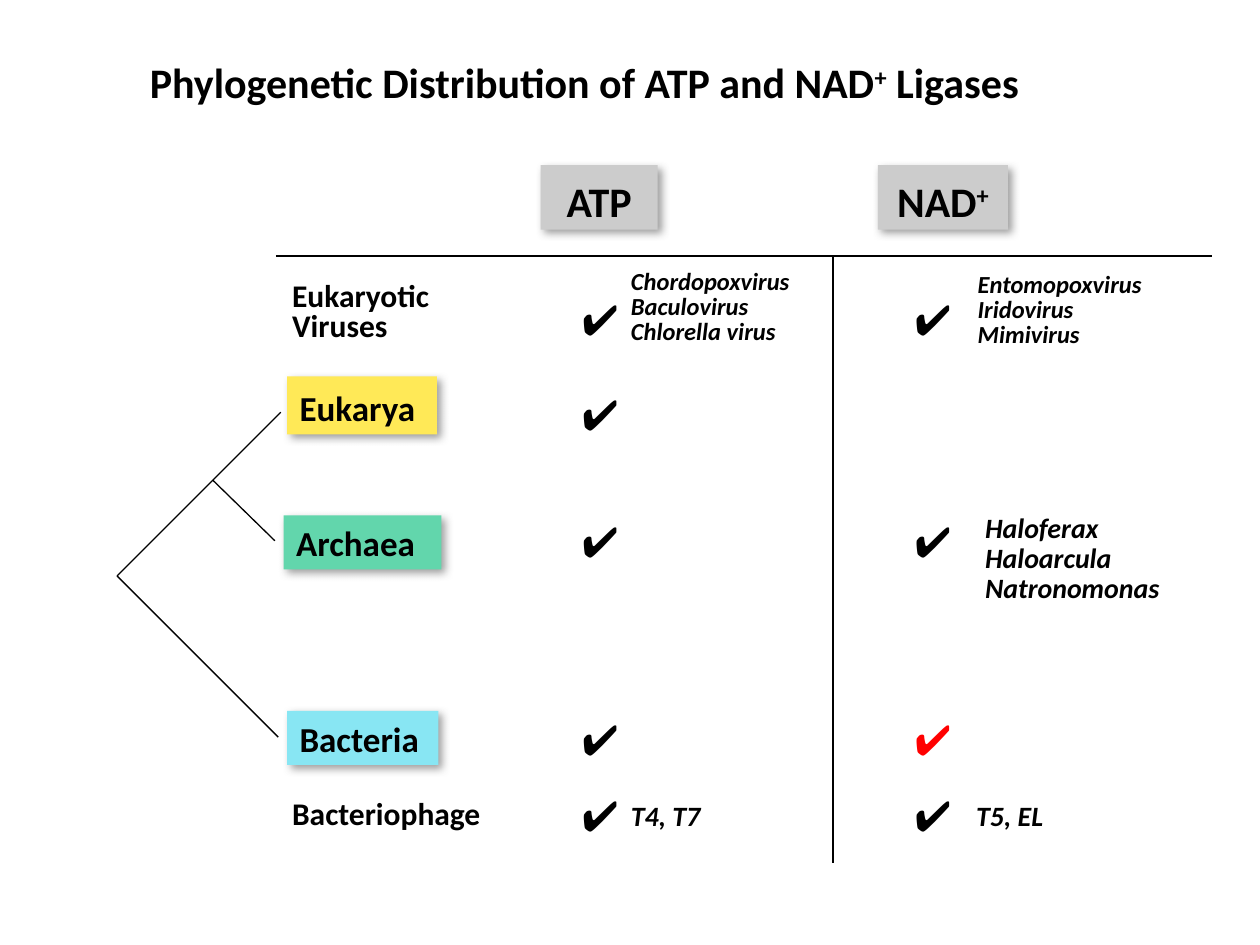
"""Build a slide on the phylogenetic distribution of ATP and NAD+ ligases."""
import dataclasses
import itertools

import lxml.etree
import pptx
import pptx.dml.color
import pptx.enum.shapes
import pptx.enum.text
import pptx.oxml
import pptx.oxml.ns
import pptx.shapes.base
import pptx.slide
import pptx.text.text
import pptx.util

Cm = pptx.util.Cm
Align = pptx.enum.text.PP_ALIGN


@dataclasses.dataclass(frozen=True)
class Theme:
    font: str = "Calibri"
    mark_font: str = "Comic Neue"
    ink: str = "000000"
    alert: str = "FF0000"
    shadow: str = "808080"
    grey: str = "CCCCCC"
    yellow: str = "FFE957"
    green: str = "62D6AC"
    blue: str = "88E6F3"
    heading: float = 24
    domain: float = 20
    group: float = 18
    example: float = 16
    small: float = 14
    line: float = 0.75


THEME = Theme()


@dataclasses.dataclass(frozen=True)
class Style:
    size: float
    font: str = THEME.font
    color: str = THEME.ink
    bold: bool = True
    italic: bool = False
    spacing: float = 1.0
    alignment: Align = Align.LEFT


@dataclasses.dataclass(frozen=True)
class Box:
    left: float
    top: float
    width: float
    height: float

    def lengths(self) -> tuple:
        return Cm(self.left), Cm(self.top), Cm(self.width), Cm(self.height)


@dataclasses.dataclass(frozen=True)
class Tag:
    text: str
    box: Box
    fill: str
    style: Style
    inset: float


@dataclasses.dataclass(frozen=True)
class Label:
    text: str
    box: Box
    style: Style


@dataclasses.dataclass(frozen=True)
class Line:
    start: tuple[float, float]
    end: tuple[float, float]


HEADING = Style(THEME.heading)
COLUMN = Style(THEME.heading, alignment=Align.CENTER)
DOMAIN = Style(THEME.domain)
GROUP = Style(THEME.group, spacing=0.8)
VIRUS = Style(THEME.small, italic=True, spacing=0.85)
PHAGE = Style(THEME.example, italic=True, spacing=0.85)
ARCHAEON = Style(THEME.example, italic=True, spacing=0.9)

TAGS = [
    Tag("ATP", Box(10.9, 3.33, 2.36, 1.3), THEME.grey, COLUMN, 0.2),
    Tag("NAD+", Box(17.7, 3.33, 2.62, 1.3), THEME.grey, COLUMN, 0.2),
    Tag("Eukarya", Box(5.79, 7.59, 3.02, 1.17), THEME.yellow, DOMAIN, 0.2),
    Tag("Archaea", Box(5.72, 10.39, 3.18, 1.09), THEME.green, DOMAIN, 0.13),
    Tag("Bacteria", Box(5.79, 14.33, 3.05, 1.09), THEME.blue, DOMAIN, 0.13),
]

LABELS = [
    Label("Phylogenetic Distribution of ATP and NAD+ Ligases", Box(2.77, 1.02, 19.56, 1.27), HEADING),
    Label("Eukaryotic\nViruses", Box(5.64, 5.59, 3.61, 1.47), GROUP),
    Label("Bacteriophage", Box(5.64, 15.88, 4.5, 1.02), Style(THEME.group)),
    Label("Chordopoxvirus\nBaculovirus\nChlorella virus", Box(12.47, 5.33, 4.19, 1.8), VIRUS),
    Label("Entomopoxvirus\nIridovirus\nMimivirus", Box(19.46, 5.38, 4.14, 1.8), VIRUS),
    Label("Haloferax\nHaloarcula\nNatronomonas", Box(19.61, 10.24, 4.19, 2.08), ARCHAEON),
    Label("T4, T7", Box(12.47, 16.08, 3.78, 0.85), PHAGE),
    Label("T5, EL", Box(19.43, 16.08, 3.78, 0.85), PHAGE),
]

MARK_COLUMNS = {"ATP": 11.48, "NAD": 18.19}
MARK_ROWS = {"Viruses": 5.79, "Eukarya": 7.7, "Archaea": 10.26, "Bacteria": 14.25, "Phage": 15.8}
ABSENT = {("NAD", "Eukarya")}
HIGHLIGHTED = {("NAD", "Bacteria")}

ROOT = (2.36, 11.61)
RULE_TOP = 5.16
LINES = [
    Line(ROOT, (5.61, 14.86)),
    Line(ROOT, (5.66, 8.31)),
    Line((4.29, 9.68), (5.54, 10.9)),
    Line((5.56, RULE_TOP), (24.43, RULE_TOP)),
    Line((16.79, RULE_TOP), (16.79, 17.4)),
]


def rgb(color: str) -> pptx.dml.color.RGBColor:
    return pptx.dml.color.RGBColor.from_string(color)


def write(frame: pptx.text.text.TextFrame, text: str, style: Style) -> None:
    frame.word_wrap = True
    frame.vertical_anchor = pptx.enum.text.MSO_ANCHOR.TOP
    frame.text = text
    for paragraph, line in zip(frame.paragraphs, text.split("\n")):
        paragraph.alignment = style.alignment
        paragraph.line_spacing = style.spacing
        parts = [part for part in line.partition("+") if part]
        paragraph.runs[0].text = parts[0]
        for part in parts[1:]:
            paragraph.add_run().text = part
        for run in paragraph.runs:
            run.font.name = style.font
            run.font.size = pptx.util.Pt(style.size)
            run.font.bold = style.bold
            run.font.italic = style.italic
            run.font.color.rgb = rgb(style.color)
            if run.text == "+":
                run.font._element.set("baseline", "30000")


def add_shadow(shape: pptx.shapes.base.BaseShape) -> None:
    shape.shadow.inherit = False
    effects = shape._element.spPr.find(pptx.oxml.ns.qn("a:effectLst"))
    effects.append(pptx.oxml.parse_xml(
        f'<a:outerShdw {pptx.oxml.ns.nsdecls("a")} blurRad="{pptx.util.Pt(5)}" '
        f'dist="{pptx.util.Pt(3)}" dir="2700000" algn="ctr" rotWithShape="0">'
        f'<a:srgbClr val="{THEME.shadow}"><a:alpha val="75000"/></a:srgbClr></a:outerShdw>'))


def add_tag(slide: pptx.slide.Slide, tag: Tag) -> None:
    shape = slide.shapes.add_shape(pptx.enum.shapes.MSO_SHAPE.RECTANGLE, *tag.box.lengths())
    shape.fill.solid()
    shape.fill.fore_color.rgb = rgb(tag.fill)
    shape.line.fill.background()
    add_shadow(shape)
    shape.text_frame.margin_top = Cm(tag.inset)
    shape.text_frame.margin_bottom = Cm(0)
    write(shape.text_frame, tag.text, tag.style)


def add_label(slide: pptx.slide.Slide, label: Label) -> None:
    write(slide.shapes.add_textbox(*label.box.lengths()).text_frame, label.text, label.style)


def add_line(slide: pptx.slide.Slide, line: Line) -> None:
    ends = [Cm(value) for value in line.start + line.end]
    connector = slide.shapes.add_connector(pptx.enum.shapes.MSO_CONNECTOR.STRAIGHT, *ends)
    connector.line.color.rgb = rgb(THEME.ink)
    connector.line.width = pptx.util.Pt(THEME.line)
    lxml.etree.SubElement(connector._element.spPr, pptx.oxml.ns.qn("a:effectLst"))


def add_marks(slide: pptx.slide.Slide) -> None:
    for column, row in itertools.product(MARK_COLUMNS, MARK_ROWS):
        if (column, row) in ABSENT:
            continue
        color = THEME.alert if (column, row) in HIGHLIGHTED else THEME.ink
        style = Style(THEME.heading, THEME.mark_font, color, bold=False)
        add_label(slide, Label("✔", Box(MARK_COLUMNS[column], MARK_ROWS[row], 1.3, 1.27), style))


def main() -> None:
    presentation = pptx.Presentation()
    presentation.slide_width, presentation.slide_height = Cm(25.4), Cm(19.05)
    slide = presentation.slides.add_slide(presentation.slide_layouts[6])
    for tag in TAGS:
        add_tag(slide, tag)
    for line in LINES:
        add_line(slide, line)
    for label in LABELS:
        add_label(slide, label)
    add_marks(slide)
    presentation.save("out.pptx")


if __name__ == "__main__":
    main()
